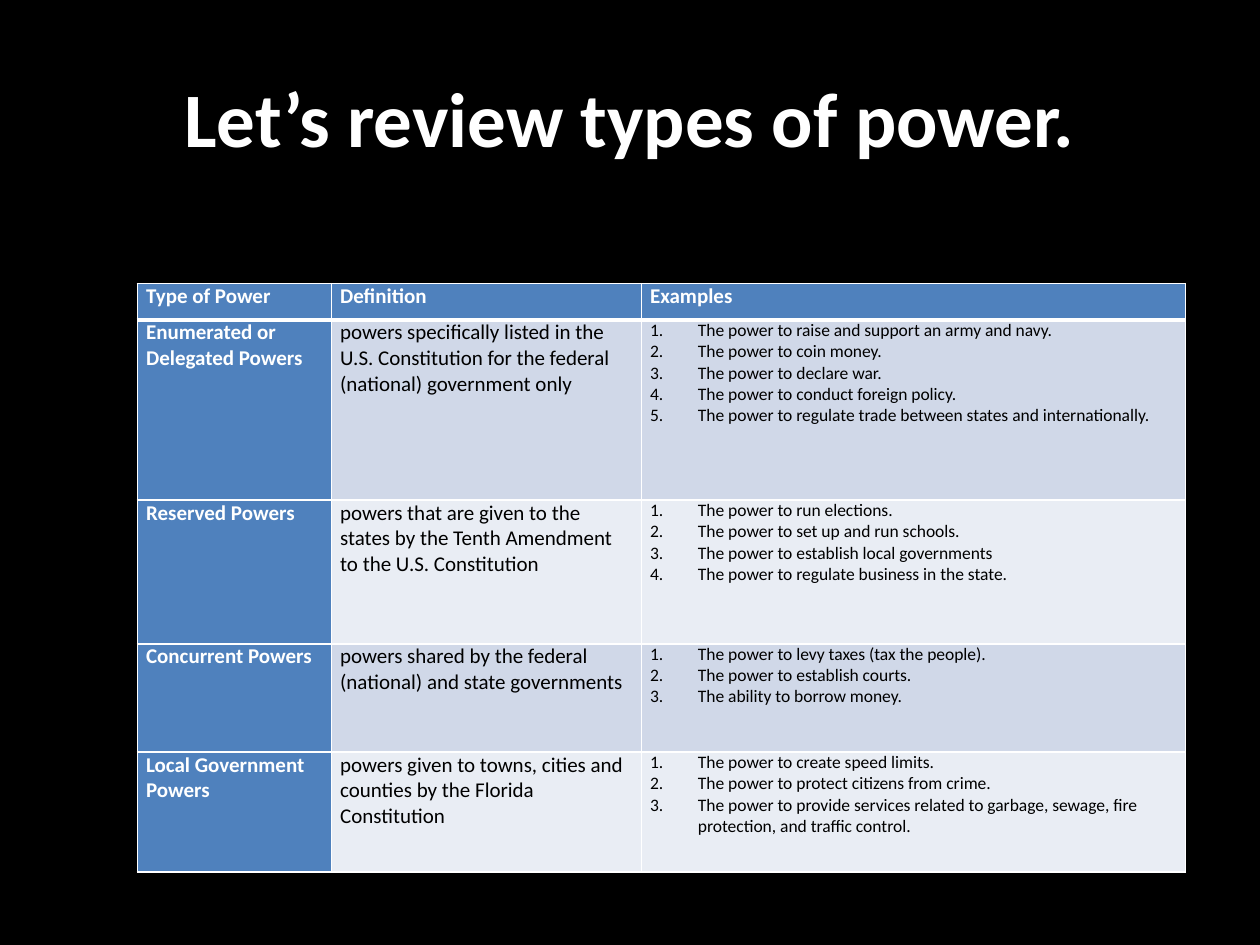
from lxml.etree import SubElement
from pptx import Presentation
from pptx.dml.color import RGBColor
from pptx.enum.text import MSO_ANCHOR as Anchor, PP_ALIGN as Align
from pptx.oxml.ns import qn
from pptx.util import Inches, Pt

BLACK, WHITE, BLUE = "000000", "FFFFFF", "4F81BD"
BANDS = ["D0D8E8", "E9EDF4"]
COLUMN_WIDTHS = [1.54, 2.46, 4.32]
ROW_HEIGHTS = [0.29, 1.43, 1.14, 0.86, 0.95]
HEADINGS = ["Type of Power", "Definition", "Examples"]
POWERS = [
    ("Enumerated or Delegated Powers",
     "powers specifically listed in the U.S. Constitution for the federal (national) government only",
     ["The power to raise and support an army and navy.",
      "The power to coin money.",
      "The power to declare war.",
      "The power to conduct foreign policy.",
      "The power to regulate trade between states and internationally."]),
    ("Reserved Powers",
     "powers that are given to the states by the Tenth Amendment to the U.S. Constitution",
     ["The power to run elections.",
      "The power to set up and run schools.",
      "The power to establish local governments",
      "The power to regulate business in the state."]),
    ("Concurrent Powers",
     "powers shared by the federal (national) and state governments",
     ["The power to levy taxes (tax the people).",
      "The power to establish courts.",
      "The ability to borrow money."]),
    ("Local Government Powers",
     "powers given to towns, cities and counties by the Florida Constitution",
     ["The power to create speed limits.",
      "The power to protect citizens from crime.",
      "The power to provide services related to garbage, sewage, fire protection, and traffic control."]),
]


def rgb(color):
    return RGBColor.from_string(color)


def number_paragraph(para, indent=0.38):
    """Turn the paragraph into an item of a 1. 2. 3. list."""
    props = para._p.get_or_add_pPr()
    props.set("marL", str(Inches(indent)))
    props.set("indent", str(-Inches(indent)))
    SubElement(props, qn("a:buFont"), typeface="+mj-lt")
    SubElement(props, qn("a:buAutoNum"), type="arabicPeriod")


def write(frame, lines, size=12, color=BLACK, bold=False, align=Align.LEFT,
          font="Calibri", numbered=False):
    """Fill a text frame with one paragraph per line."""
    for index, line in enumerate(lines):
        para = frame.add_paragraph() if index else frame.paragraphs[0]
        para.alignment = align
        if numbered:
            number_paragraph(para)
        span = para.add_run()
        span.text = line
        span.font.name, span.font.size, span.font.bold = font, Pt(size), bold
        span.font.color.rgb = rgb(color)


def draw_borders(cell, color, widths):
    props = cell._tc.get_or_add_tcPr()
    for side, width in widths.items():
        line = SubElement(props, qn(f"a:ln{side}"), w=str(Pt(width)))
        fill = SubElement(line, qn("a:solidFill"))
        SubElement(fill, qn("a:srgbClr"), val=color)


class PowerSlide:
    def __init__(self, deck):
        self.page = deck.slides.add_slide(deck.slide_layouts[5])
        background = self.page.background.fill
        background.solid()
        background.fore_color.rgb = rgb(BLACK)

    def title(self, text, left, top, width, height):
        box = self.page.shapes.title
        box.left, box.top = Inches(left), Inches(top)
        box.width, box.height = Inches(width), Inches(height)
        box.text_frame.vertical_anchor = Anchor.MIDDLE
        write(box.text_frame, [text], size=44, color=WHITE, bold=True, align=Align.CENTER)

    def cell(self, cell, lines, fill, top_line=1, bottom_line=1, **text_format):
        cell.margin_left = cell.margin_right = Inches(0.07)
        cell.margin_top = cell.margin_bottom = 0
        draw_borders(cell, WHITE, {"L": 1, "R": 1, "T": top_line, "B": bottom_line})
        cell.fill.solid()
        cell.fill.fore_color.rgb = rgb(fill)
        write(cell.text_frame, lines, **text_format)

    def table(self, left, top):
        table = self.page.shapes.add_table(
            len(ROW_HEIGHTS), len(COLUMN_WIDTHS), Inches(left), Inches(top),
            Inches(sum(COLUMN_WIDTHS)), Inches(sum(ROW_HEIGHTS))).table
        for column, width in zip(table.columns, COLUMN_WIDTHS):
            column.width = Inches(width)
        for row, height in zip(table.rows, ROW_HEIGHTS):
            row.height = Inches(height)

        for column, heading in enumerate(HEADINGS):
            self.cell(table.cell(0, column), [heading], BLUE, bottom_line=3,
                      color=WHITE, bold=True)
        for row, (name, definition, examples) in enumerate(POWERS, start=1):
            band = BANDS[(row - 1) % 2]
            top_line = 3 if row == 1 else 1
            self.cell(table.cell(row, 0), [name], BLUE, top_line, color=WHITE, bold=True)
            self.cell(table.cell(row, 1), [definition], band, top_line)
            self.cell(table.cell(row, 2), examples, band, top_line, size=10, numbered=True)


def main():
    deck = Presentation()
    deck.slide_width, deck.slide_height = Inches(10), Inches(7.5)
    slide = PowerSlide(deck)
    slide.title("Let’s review types of power.", 0.5, 0.3, 9, 1.25)
    slide.table(1.09, 2.25)
    deck.save("out.pptx")


if __name__ == "__main__":
    main()
